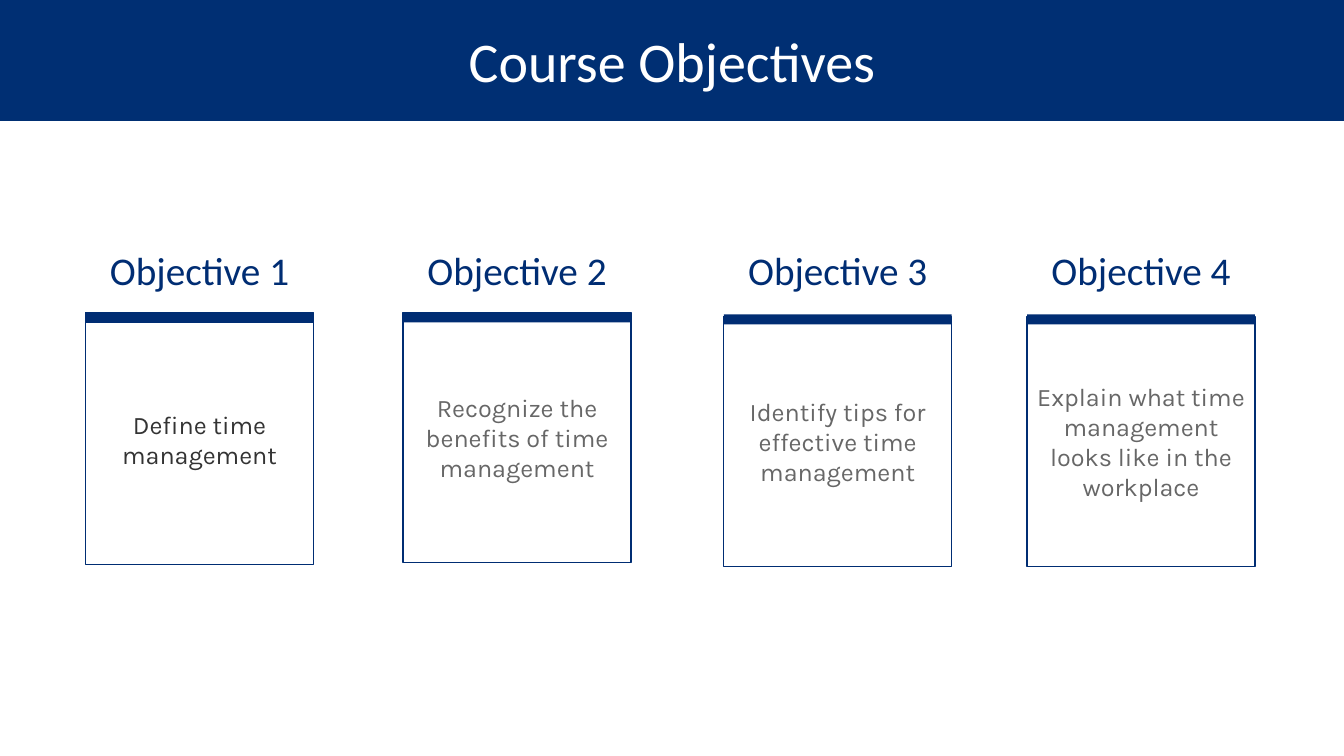
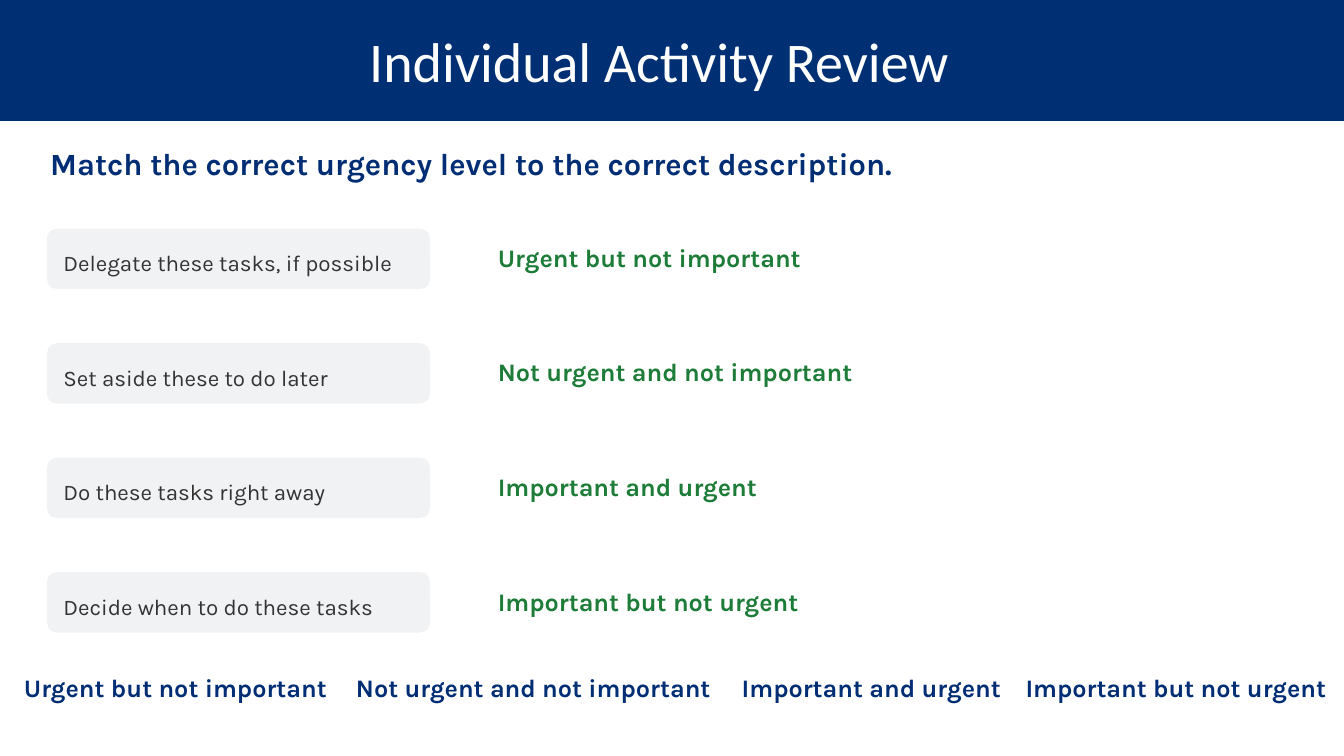
import pptx
import pptx.dml.color
import pptx.enum.shapes
import pptx.enum.text
import pptx.util

Pt = pptx.util.Pt
SHAPE = pptx.enum.shapes.MSO_SHAPE
ALIGN = pptx.enum.text.PP_ALIGN
ANCHOR = pptx.enum.text.MSO_ANCHOR

SLIDE_WIDTH, SLIDE_HEIGHT = 960, 540
TITLE_ONLY = 5
HEADING_FONT, BODY_FONT = "Calibri", "Karla"
COLORS = {
    "band": "002F73",
    "navy": "002D73",
    "white": "FFFFFF",
    "dark": "333333",
    "gray": "676767",
    "panel": "F1F2F4",
    "green": "1D7C38",
}

# Objective cards: left, top, bar top, bar outline, text color, text
CARD_WIDTH, CARD_HEIGHT, BAR_HEIGHT = 162.7, 178.6, 7.2
HEADING_WIDTH = 200
OBJECTIVES = [
    (61.2, 224.6, 223.2, "navy", "dark", "Define time management"),
    (288, 223.2, 223.2, None, "gray", "Recognize the benefits of time management"),
    (517, 226, 224.6, None, "gray", "Identify tips for effective time management"),
    (733.7, 226, 224.6, None, "gray",
     "Explain what time management looks like in the workplace"),
]

# Matching rows: description and its urgency level
ROW_PITCH = 81.8
MATCHES = [
    ("Delegate these tasks, if possible", "Urgent but not important"),
    ("Set aside these to do later", "Not urgent and not important"),
    ("Do these tasks right away", "Important and urgent"),
    ("Decide when to do these tasks", "Important but not urgent"),
]
# Left and width of each level in the answer bank
BANK_COLUMNS = [(2.2, 246.2), (244.2, 273.6), (519.1, 206.6), (722.3, 235.4)]


def color(name):
    return pptx.dml.color.RGBColor.from_string(COLORS[name])


def write(text_frame, text, size, font, text_color, align=ALIGN.LEFT,
          bold=False, line_spacing=None):
    """Write one formatted run into a text frame."""
    text_frame.word_wrap = True
    paragraph = text_frame.paragraphs[0]
    paragraph.alignment = align
    paragraph.line_spacing = line_spacing
    run = paragraph.add_run()
    run.text = text
    run.font.size = Pt(size)
    run.font.name = font
    run.font.bold = bold
    run.font.color.rgb = color(text_color)


def add_text(shapes, left, top, width, height, text, size, font, text_color, **style):
    box = shapes.add_textbox(Pt(left), Pt(top), Pt(width), Pt(height))
    write(box.text_frame, text, size, font, text_color, **style)


def add_box(shapes, left, top, width, height, fill=None, line=None,
            preset=SHAPE.RECTANGLE):
    shape = shapes.add_shape(preset, Pt(left), Pt(top), Pt(width), Pt(height))
    shape.shadow.inherit = False
    if fill:
        shape.fill.solid()
        shape.fill.fore_color.rgb = color(fill)
    else:
        shape.fill.background()
    if line:
        shape.line.color.rgb = color(line)
        shape.line.width = Pt(1)
    else:
        shape.line.fill.background()
    return shape


def add_titled_slide(presentation, text, right_inset=7.2):
    """Add a slide with the title on a full-width band."""
    slide = presentation.slides.add_slide(presentation.slide_layouts[TITLE_ONLY])
    title = slide.shapes.title
    title.left, title.top = Pt(0), Pt(15.1)
    title.width, title.height = Pt(SLIDE_WIDTH), Pt(55.4)
    frame = title.text_frame
    frame.auto_size = pptx.enum.text.MSO_AUTO_SIZE.NONE
    frame.vertical_anchor = ANCHOR.TOP
    frame.margin_right = Pt(right_inset)
    write(frame, text, 40, HEADING_FONT, "white", align=ALIGN.CENTER)
    # The band goes behind the title
    band = add_box(slide.shapes, 0, 0, SLIDE_WIDTH, 86.4, fill="band")
    title.element.addprevious(band.element)
    return slide


def add_objective(shapes, number, left, top, bar_top, bar_line, text_color, text):
    card = add_box(shapes, left, top, CARD_WIDTH, CARD_HEIGHT, line="navy")
    card.text_frame.vertical_anchor = ANCHOR.MIDDLE
    write(card.text_frame, text, 18, BODY_FONT, text_color, align=ALIGN.CENTER)
    add_box(shapes, left, bar_top, CARD_WIDTH, BAR_HEIGHT, fill="navy", line=bar_line)
    heading_left = left - (HEADING_WIDTH - CARD_WIDTH) / 2
    add_text(shapes, heading_left, 155.5, HEADING_WIDTH, 54, f"Objective {number}",
             28, HEADING_FONT, "navy", align=ALIGN.CENTER, line_spacing=1.5)


def add_match(shapes, row, description, level):
    offset = row * ROW_PITCH
    group = shapes.add_group_shape()
    add_box(group.shapes, 33.6, 163.3 + offset, 273.6, 43.2, fill="panel",
            preset=SHAPE.ROUNDED_RECTANGLE)
    add_text(group.shapes, 38.2, 169.9 + offset, 259, 29, description,
             16, BODY_FONT, "dark", line_spacing=Pt(24))
    add_text(shapes, 348.5, 169.5 + offset, 311, 29, level,
             18, BODY_FONT, "green", bold=True)


def build_objectives(presentation):
    slide = add_titled_slide(presentation, "Course Objectives")
    for number, objective in enumerate(OBJECTIVES, start=1):
        add_objective(slide.shapes, number, *objective)


def build_review(presentation):
    slide = add_titled_slide(presentation, "Individual Activity Review", right_inset=25.8)
    add_text(slide.shapes, 28.8, 100.1, 822, 34,
             "Match the correct urgency level to the correct description.",
             22, BODY_FONT, "navy", bold=True)
    for row, (description, level) in enumerate(MATCHES):
        add_match(slide.shapes, row, description, level)
    # Answer bank along the bottom
    for (left, width), (_, level) in zip(BANK_COLUMNS, MATCHES):
        add_text(slide.shapes, left, 476.6, width, 29, level,
                 18, BODY_FONT, "navy", align=ALIGN.CENTER, bold=True)


def main():
    presentation = pptx.Presentation()
    presentation.slide_width = Pt(SLIDE_WIDTH)
    presentation.slide_height = Pt(SLIDE_HEIGHT)
    build_objectives(presentation)
    build_review(presentation)
    presentation.save("out.pptx")


if __name__ == "__main__":
    main()
